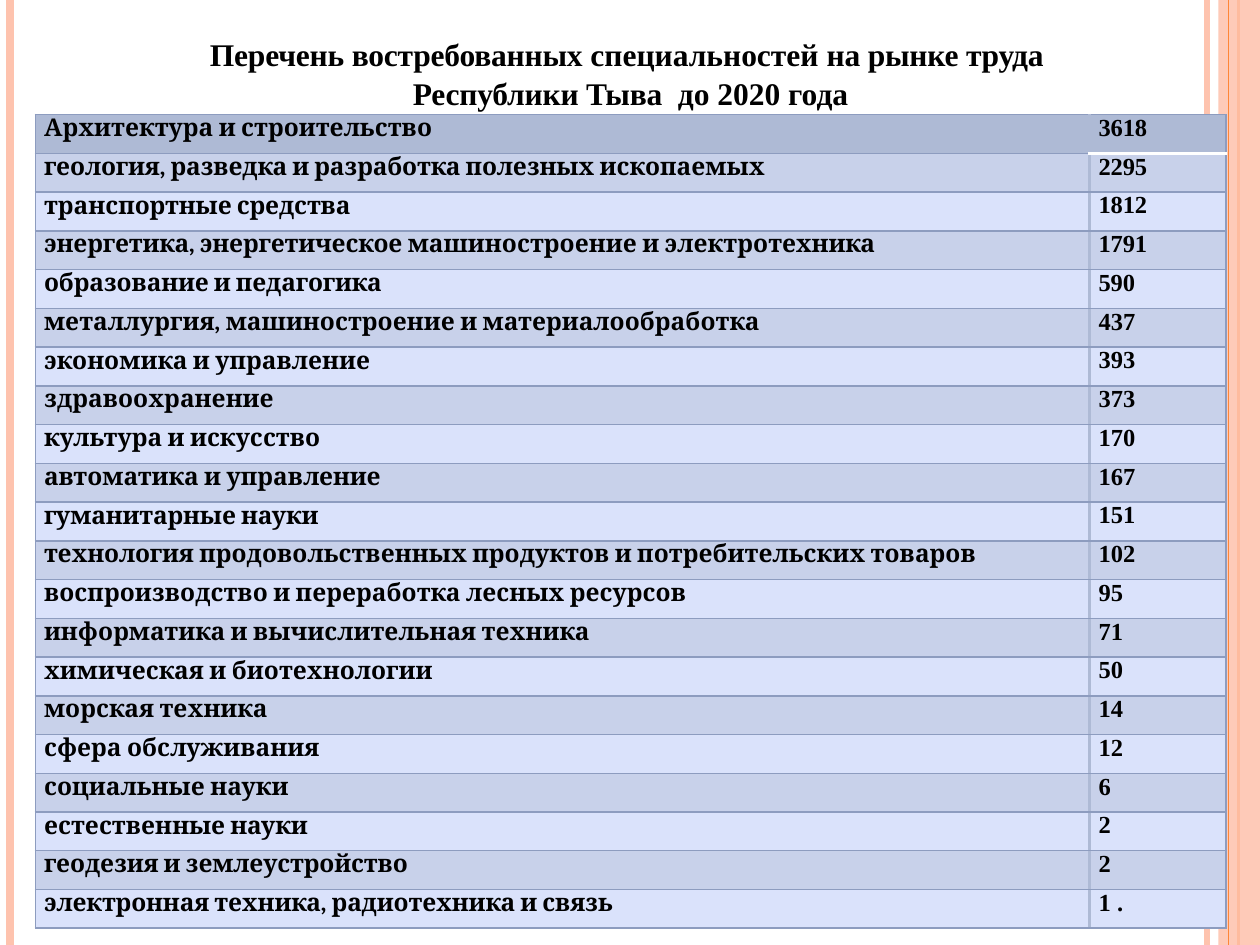
from dataclasses import dataclass

from lxml.etree import SubElement
from pptx import Presentation
from pptx.dml.color import RGBColor
from pptx.enum.shapes import MSO_CONNECTOR, MSO_SHAPE
from pptx.enum.text import PP_ALIGN
from pptx.oxml.ns import qn
from pptx.util import Inches, Pt


@dataclass(frozen=True)
class Theme:
    text: str = "000000"
    peach: str = "FEC3AE"
    orange: str = "FE8637"
    header: str = "AEBAD5"
    band: str = "C8D1EA"
    plain: str = "DAE2FB"
    rule: str = "8D9CBF"
    white: str = "FFFFFF"
    title_font: str = "Times New Roman"
    label_font: str = "Cambria"
    title_size: int = 18
    table_size: int = 14


# A pair of ~ marks encloses slightly tightened letters
TITLE = ["~Перечень востребованных ~специальностей ~на рынке труда ~",
         "~Республики Тыва  ~до 2020 года"]
ROWS = [
    ("Архитектура и строительство", "~3618~"),
    ("~геология, разведка и разработка полезных ~ископаемых", "~2295~"),
    ("транс~портные средства~", "~1812~"),
    ("~энергетика, энергетическое ~машиностроение и электро~техника~", "~1791~"),
    ("~образование и педагогика~", "~590~"),
    ("металлургия, машиностроение и материалообработка", "437"),
    ("экономика и управление", "393"),
    ("здравоохранение", "373"),
    ("культура и искусство", "170"),
    ("автоматика и управ~ление~", "167"),
    ("~гуманитарные науки~", "151"),
    ("~технология ~продовольственных продуктов и потребительских товаров", "102"),
    ("воспроизводство и переработка лесных ресурсов", "95"),
    ("информатика и вычислительная техника", "71"),
    ("химическая и биотехнологии", "50"),
    ("морская техника", "14"),
    ("сфера обслуживания", "12"),
    ("социальные науки", "~6~"),
    ("естествен~ные науки~", "~2~"),
    ("~геодезия и землеустройство~", "~2~"),
    ("~электронная техника, радиотехника и связь~", "1 ."),
]


class SlideBuilder:
    def __init__(self, slide, theme):
        self.s = slide
        self.theme = theme

    def vertical_line(self, x, color, width):
        line = self.s.shapes.add_connector(
            MSO_CONNECTOR.STRAIGHT, Inches(x), 0, Inches(x), Inches(7.5))
        line.line.color.rgb = RGBColor.from_string(color)
        line.line.width = Pt(width)
        SubElement(line._element.spPr, qn("a:effectLst"))

    def stripe(self, x, width, color, alpha):
        sp = self.s.shapes.add_shape(
            MSO_SHAPE.RECTANGLE, Inches(x), 0, Inches(width), Inches(7.5))
        sp.shadow.inherit = False
        sp.line.fill.background()
        sp.fill.solid()
        sp.fill.fore_color.rgb = RGBColor.from_string(color)
        clr = sp._element.spPr.find(".//" + qn("a:srgbClr"))
        SubElement(clr, qn("a:alpha"), val=str(alpha * 1000))

    def add_runs(self, p, text, font, size):
        for i, part in enumerate(text.split("~")):
            if not part:
                continue
            r = p.add_run()
            r.text = part
            r.font.name = font
            r.font.size = Pt(size)
            r.font.bold = True
            r.font.color.rgb = RGBColor.from_string(self.theme.text)
            if i % 2:
                r._r.get_or_add_rPr().set("spc", "-10")

    def title(self, lines, x, y, width, height):
        tf = self.s.shapes.add_textbox(
            Inches(x), Inches(y), Inches(width), Inches(height)).text_frame
        tf.word_wrap = True
        for i, text in enumerate(lines):
            p = tf.add_paragraph() if i else tf.paragraphs[0]
            p.alignment = PP_ALIGN.CENTER
            p.line_spacing = 1.05
            self.add_runs(p, text, self.theme.title_font, self.theme.title_size)

    def borders(self, cell, sides):
        tcPr = cell._tc.get_or_add_tcPr()
        for side in "LRTB":
            color, width = sides[side]
            ln = SubElement(tcPr, qn("a:ln" + side), w=str(Pt(width)))
            fill = SubElement(ln, qn("a:solidFill"))
            SubElement(fill, qn("a:srgbClr"), val=color)

    def table(self, rows, x, y, col_widths, height):
        t = self.theme
        table = self.s.shapes.add_table(
            len(rows), len(col_widths), Inches(x), Inches(y),
            Inches(sum(col_widths)), Inches(height)).table
        table.first_row = table.horz_banding = False
        for col, width in zip(table.columns, col_widths):
            col.width = Inches(width)
        thin, divider, white = (t.rule, 1), (t.header, 2), (t.white, 2)
        for i, row in enumerate(rows):
            table.rows[i].height = Inches(height / len(rows))
            fill = t.header if i == 0 else (t.band if i % 2 else t.plain)
            for j, text in enumerate(row):
                cell = table.cell(i, j)
                cell.margin_left = cell.margin_right = Inches(0.07)
                cell.margin_top = cell.margin_bottom = 0
                # White rule under the header figure only
                self.borders(cell, {
                    "L": divider if j else thin,
                    "R": thin if j else divider,
                    "T": white if (i, j) == (1, 1) else thin,
                    "B": white if (i, j) == (0, 1) else thin,
                })
                cell.fill.solid()
                cell.fill.fore_color.rgb = RGBColor.from_string(fill)
                p = cell.text_frame.paragraphs[0]
                p.alignment = PP_ALIGN.JUSTIFY
                font = t.title_font if j else t.label_font
                self.add_runs(p, text, font, t.table_size)


def main():
    prs = Presentation()
    prs.slide_width, prs.slide_height = Inches(10), Inches(7.5)
    theme = Theme()
    b = SlideBuilder(prs.slides.add_slide(prs.slide_layouts[6]), theme)

    # Side decoration
    b.vertical_line(9.58, theme.peach, 3)
    b.vertical_line(0.08, theme.peach, 4.5)
    b.vertical_line(9.83, theme.orange, 1.5)
    b.stripe(9.67, 0.33, theme.peach, 87)
    b.vertical_line(9.75, theme.orange, 0.75)

    # Title and table
    b.title(TITLE, 0.28, 0.21, 9.45, 0.71)
    b.table(ROWS, 0.28, 0.91, [8.37, 1.08], 6.46)
    prs.save("out.pptx")


if __name__ == "__main__":
    main()
